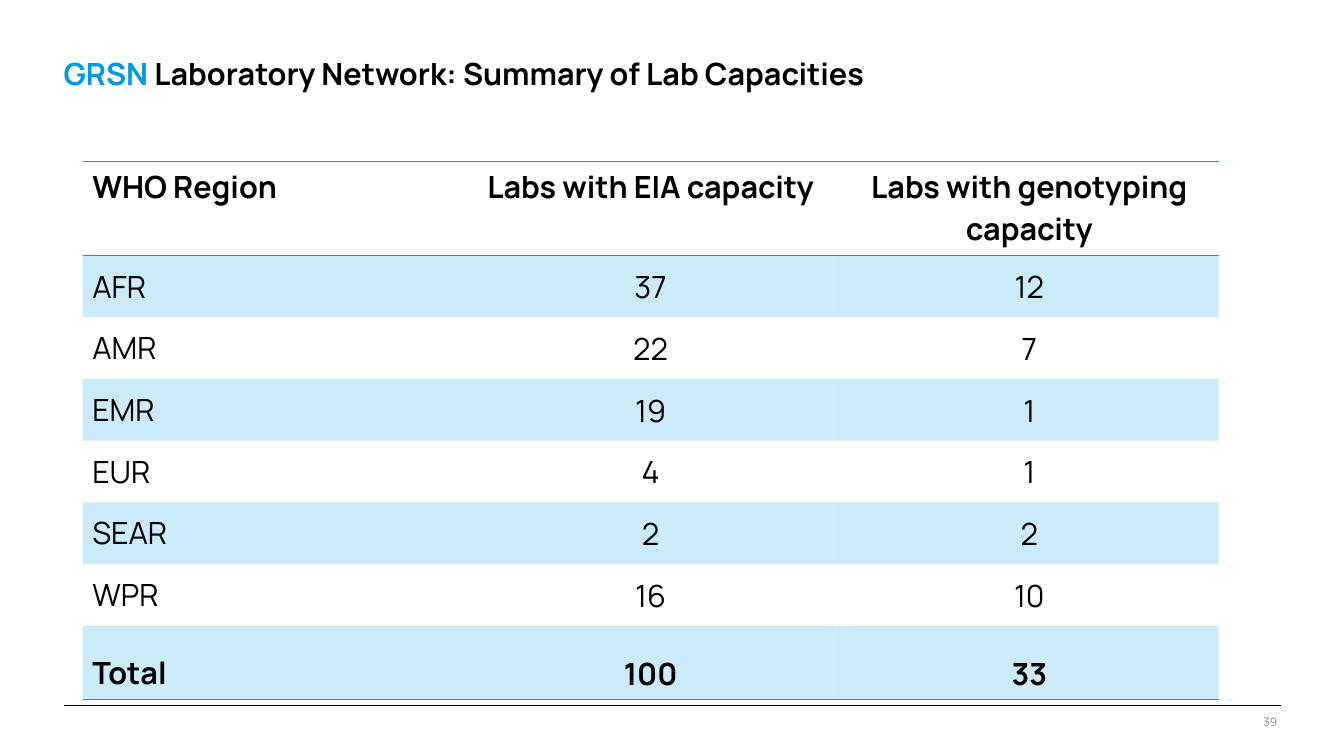
from lxml.etree import SubElement
from pptx import Presentation
from pptx.dml.color import RGBColor
from pptx.enum.shapes import MSO_CONNECTOR
from pptx.enum.text import MSO_ANCHOR as ANCHOR, MSO_AUTO_SIZE as FIT, PP_ALIGN as ALIGN
from pptx.oxml.ns import qn
from pptx.util import Pt

PX = 9144
WIDTH, HEIGHT = 2199, 1237
FONT = "Manrope"
BLACK = RGBColor(0x00, 0x00, 0x00)
GREY = RGBColor(0x8C, 0x8C, 0x8C)
BLUE = RGBColor(0x00, 0x9A, 0xDE)
TABLE_BLUE = RGBColor(0x00, 0x9C, 0xDE)
NO_GRID_STYLE = "{2D5ABB26-0587-4C30-8999-92F81FD0307C}"
HEADER_HEIGHT, TOTAL_HEIGHT = 154, 120

CAPACITIES = [
    ("WHO Region", "Labs with EIA capacity", "Labs with genotyping capacity"),
    ("AFR", "37", "12"),
    ("AMR", "22", "7"),
    ("EMR", "19", "1"),
    ("EUR", "4", "1"),
    ("SEAR", "2", "2"),
    ("WPR", "16", "10"),
    ("Total", "100", "33"),
]


def emu(*lengths):
    """Turn px lengths into EMU."""
    return [n * PX for n in lengths]


def set_font(font, size, color, bold=False):
    """Apply the slide typeface with a size, colour and weight."""
    font.name, font.size, font.bold = FONT, Pt(size), bold
    font.color.rgb = color


def set_frame(tf):
    """Give a text frame no margins, wrapping and a top anchor."""
    tf.margin_left = tf.margin_top = tf.margin_right = tf.margin_bottom = 0
    tf.word_wrap = True
    tf.auto_size = FIT.SHAPE_TO_FIT_TEXT
    tf.vertical_anchor = ANCHOR.TOP


def add_title(slide, box):
    """Place the title with its first word in blue."""
    sp = slide.shapes.title
    sp.left, sp.top, sp.width, sp.height = emu(*box)
    set_frame(sp.text_frame)
    p = sp.text_frame.paragraphs[0]
    p.alignment, p.line_spacing = ALIGN.LEFT, 0.9
    for text, color in (("GRSN", BLUE), (" Laboratory Network: Summary of Lab Capacities", BLACK)):
        r = p.add_run()
        r.text = text
        set_font(r.font, 36, color, True)


def add_border(cell, side):
    """Draw a 1 pt blue line on one side of a cell."""
    ln = SubElement(cell._tc.get_or_add_tcPr(), qn(f"a:{side}"), w=str(Pt(1)))
    fill = SubElement(ln, qn("a:solidFill"))
    SubElement(fill, qn("a:srgbClr"), val=str(TABLE_BLUE))


def fill_band(cell, banded):
    """Fill a banded cell with translucent blue and clear the others."""
    if not banded:
        cell.fill.background()
        return
    cell.fill.solid()
    cell.fill.fore_color.rgb = TABLE_BLUE
    color = cell._tc.tcPr.find(qn("a:solidFill")).find(qn("a:srgbClr"))
    SubElement(color, qn("a:alpha"), val="20000")


def add_capacity_table(slide, box):
    """Build the table of laboratory capacities by region."""
    rows, cols = len(CAPACITIES), len(CAPACITIES[0])
    last = rows - 1
    table = slide.shapes.add_table(rows, cols, *emu(*box)).table
    table._tbl.tblPr.find(qn("a:tableStyleId")).text = NO_GRID_STYLE
    region_height = (box[3] - HEADER_HEIGHT - TOTAL_HEIGHT) // (rows - 2)
    heights = [HEADER_HEIGHT] + [region_height] * (rows - 2) + [TOTAL_HEIGHT]
    for row, height in zip(table.rows, heights):
        row.height = height * PX
    for i, values in enumerate(CAPACITIES):
        for j, value in enumerate(values):
            cell = table.cell(i, j)
            side, top, bottom = (16, 8, 8) if i < 2 or j == 0 else (2, 2, 0)
            cell.margin_left = cell.margin_right = side * PX
            cell.margin_top, cell.margin_bottom = emu(top, bottom)
            cell.vertical_anchor = ANCHOR.MIDDLE if i else ANCHOR.TOP
            if i == 0:
                add_border(cell, "lnT")
            if i in (0, last):
                add_border(cell, "lnB")
            fill_band(cell, i % 2 == 1)
            cell.text_frame.text = value
            p = cell.text_frame.paragraphs[0]
            p.alignment = ALIGN.CENTER if j else ALIGN.LEFT
            if i == last:
                p.line_spacing = 1.5
            set_font(p.runs[0].font, 36, BLACK, i in (0, last))


def add_footer(slide, box):
    """Draw the footer rule with the page number below its right end."""
    left, top, width, height = box
    rule = slide.shapes.add_connector(
        MSO_CONNECTOR.STRAIGHT, *emu(left, top, left + width, top))
    rule.line.color.rgb = BLACK
    rule.line.width = Pt(0.75)
    SubElement(rule._element.spPr, qn("a:effectLst"))
    number = slide.shapes.add_textbox(
        *emu(left + width - 168, top + 15, 162, height - 15))
    tf = number.text_frame
    set_frame(tf)
    tf.text = "39"
    p = tf.paragraphs[0]
    p.alignment = ALIGN.RIGHT
    set_font(p.runs[0].font, 14, GREY)


def main():
    """Build and save the slide."""
    prs = Presentation()
    prs.slide_width, prs.slide_height = emu(WIDTH, HEIGHT)
    slide = prs.slides.add_slide(prs.slide_layouts[5])
    add_footer(slide, (104, 1154, 1992, 39))
    add_title(slide, (104, 97, 2035, 55))
    add_capacity_table(slide, (135, 264, 1859, 880))
    prs.save("out.pptx")


if __name__ == "__main__":
    main()
